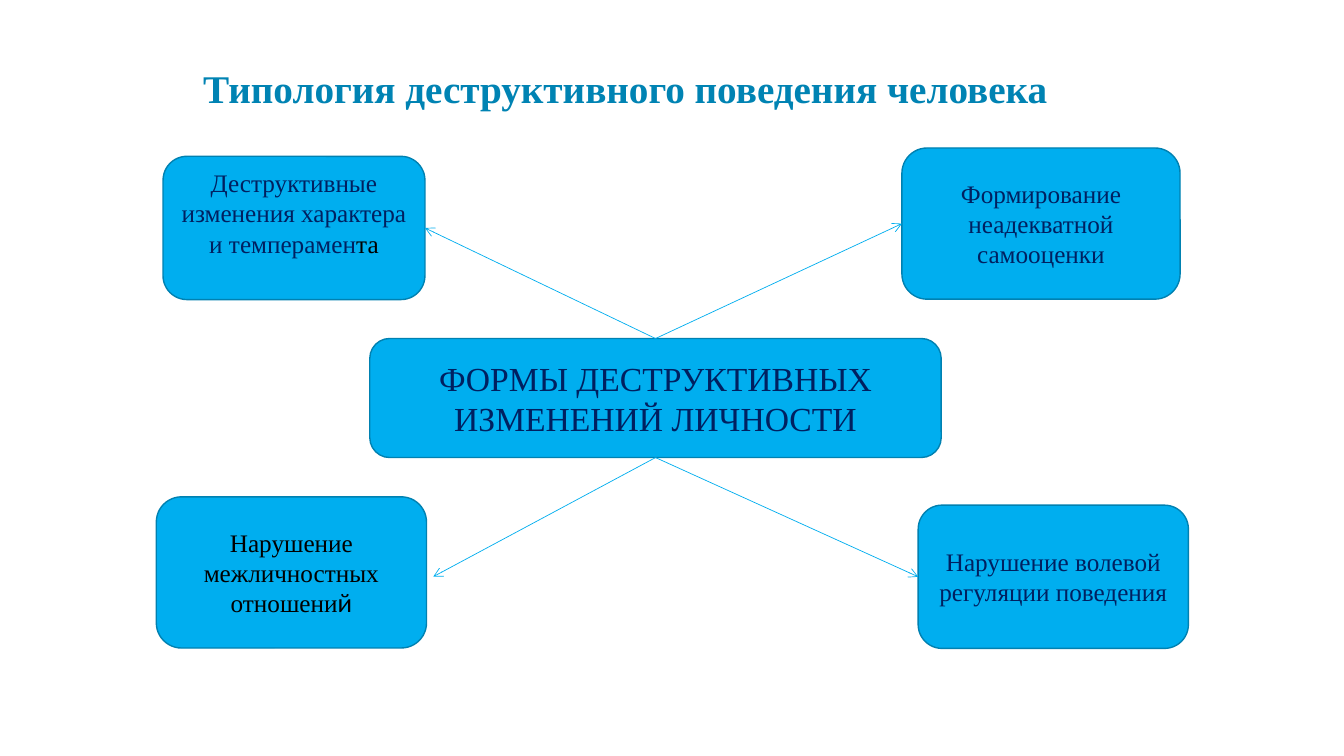
"""Build a slide on the forms of destructive personality change."""
from lxml import etree
from pptx import Presentation, util as u
from pptx.dml.color import RGBColor
from pptx.enum import shapes, text
from pptx.oxml.ns import qn

TOP, LEFT, BOTTOM, RIGHT = range(4)


def color(hex_code):
    return RGBColor.from_string(hex_code)


class Diagram:
    font = "Times New Roman"
    heading, navy, black = "0083B3", "002060", "000000"
    fill, border = "00AEEF", "0081B1"

    def __init__(self, slide):
        self.slide = slide

    def add_runs(self, frame, runs, size, bold=False):
        paragraph = frame.paragraphs[0]
        paragraph.alignment = text.PP_ALIGN.CENTER
        for words, ink, face in runs:
            run = paragraph.add_run()
            run.text = words
            run.font.name, run.font.size, run.font.bold = face, u.Pt(size), bold
            run.font.color.rgb = color(ink)
        return paragraph

    def title(self, words, left, top, width, height, indent):
        heading = self.slide.shapes.title
        heading.left, heading.top = u.Cm(left), u.Cm(top)
        heading.width, heading.height = u.Cm(width), u.Cm(height)
        frame = heading.text_frame
        frame.word_wrap = True
        frame.auto_size = text.MSO_AUTO_SIZE.NONE
        frame.vertical_anchor = text.MSO_ANCHOR.BOTTOM
        paragraph = self.add_runs(frame, [(words, self.heading, self.font)], 28, True)
        paragraph.line_spacing = 0.8
        paragraph._p.get_or_add_pPr().set("marL", str(u.Cm(indent)))

    def box(self, runs, left, top, width, height, size=18, bottom_inset=0.13):
        card = self.slide.shapes.add_shape(
            shapes.MSO_SHAPE.ROUNDED_RECTANGLE,
            u.Cm(left), u.Cm(top), u.Cm(width), u.Cm(height))
        card.shadow.inherit = False
        card.fill.solid()
        card.fill.fore_color.rgb = color(self.fill)
        card.line.color.rgb = color(self.border)
        card.line.width = u.Pt(1)
        frame = card.text_frame
        frame.word_wrap = True
        frame.vertical_anchor = text.MSO_ANCHOR.MIDDLE
        frame.margin_bottom = u.Cm(bottom_inset)
        self.add_runs(frame, runs, size)
        return card

    def arrow(self, source, source_site, target=None, target_site=None, end=(0, 0)):
        link = self.slide.shapes.add_connector(
            shapes.MSO_CONNECTOR.STRAIGHT, 0, 0, u.Cm(end[0]), u.Cm(end[1]))
        link.begin_connect(source, source_site)
        if target is not None:
            link.end_connect(target, target_site)
        link.line.color.rgb = color(self.fill)
        link.line.width = u.Pt(0.5)
        etree.SubElement(link.line._get_or_add_ln(), qn("a:tailEnd"), type="arrow")
        etree.SubElement(link._element.spPr, qn("a:effectLst"))


def main():
    deck = Presentation()
    deck.slide_width, deck.slide_height = u.Cm(33.87), u.Cm(19.05)
    diagram = Diagram(deck.slides.add_slide(deck.slide_layouts[5]))
    font, navy, black = diagram.font, diagram.navy, diagram.black

    diagram.title("Типология деструктивного поведения человека",
                  2.95, 1.47, 24.13, 1.45, indent=1.48)
    forms = diagram.box([("ФОРМЫ ДЕСТРУКТИВНЫХ ИЗМЕНЕНИЙ ЛИЧНОСТИ", navy, font)],
                        9.32, 8.53, 14.4, 3, size=24)
    diagram.box([("Нарушение межличностных отношени", black, font),
                 ("й", black, "Lato")], 3.94, 12.52, 6.81, 3.81)
    volition = diagram.box([("Нарушение волевой регуляции поведения", navy, font)],
                           23.14, 12.73, 6.81, 3.61)
    self_esteem = diagram.box([("Формирование неадекватной самооценки", navy, font)],
                              22.73, 3.73, 7.01, 3.81)
    character = diagram.box(
        [("Деструктивные изменения характера и темперамен", navy, font),
         ("та", black, font)], 4.11, 3.94, 6.6, 3.61, bottom_inset=0.89)

    diagram.arrow(forms, TOP, self_esteem, LEFT)
    diagram.arrow(forms, TOP, character, RIGHT)
    diagram.arrow(forms, BOTTOM, volition, LEFT)
    diagram.arrow(forms, BOTTOM, end=(10.92, 14.53))
    deck.save("out.pptx")


if __name__ == "__main__":
    main()
